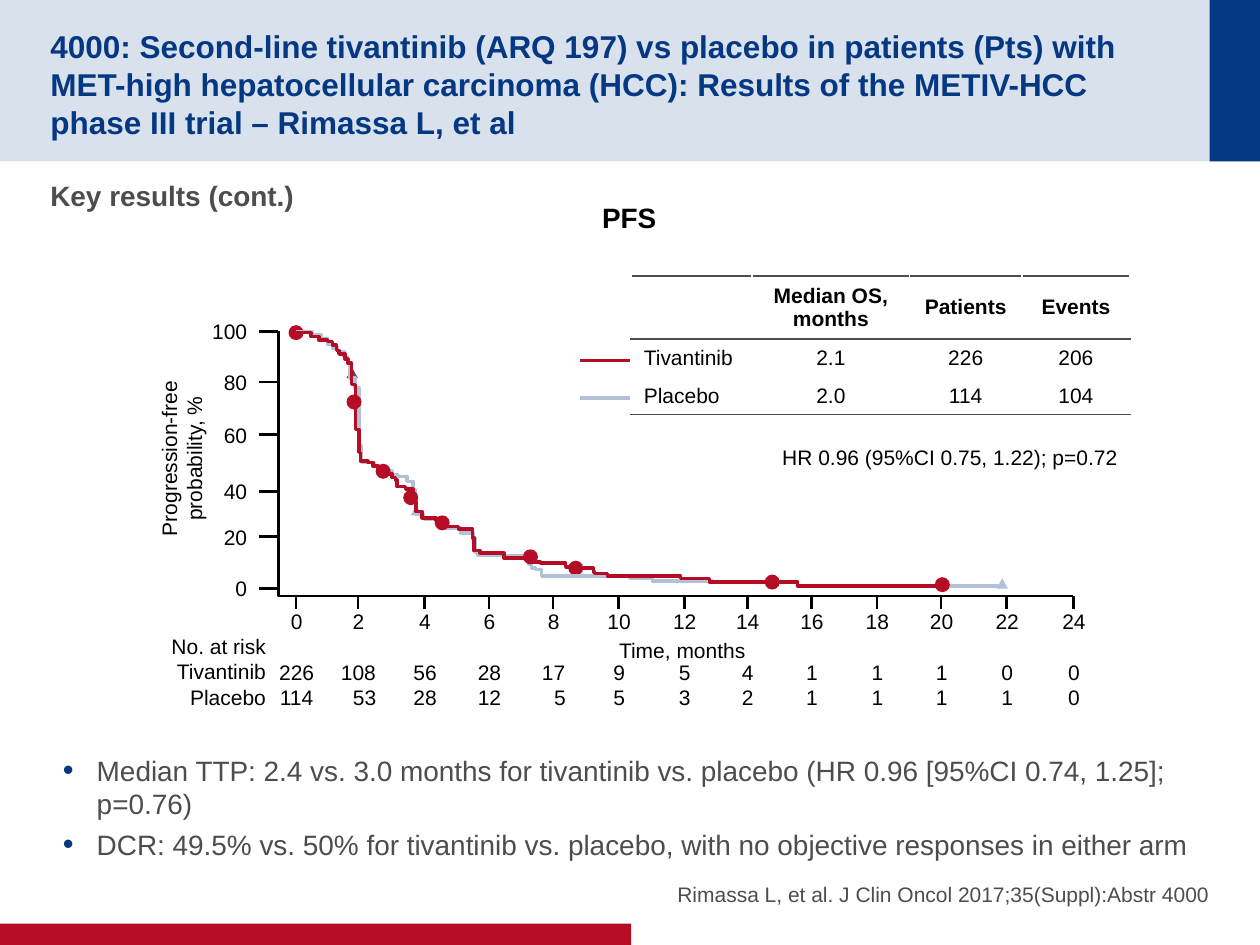
from lxml import etree
from pptx import Presentation
from pptx.dml.color import RGBColor
from pptx.enum import shapes, text
from pptx.oxml.ns import qn
from pptx.util import Pt

NAVY = RGBColor(0x04, 0x38, 0x82)
PALE_NAVY = RGBColor(0xD9, 0xE1, 0xEC)
RED = RGBColor(0xB6, 0x0D, 0x27)
LIGHT_BLUE = RGBColor(0xB2, 0xC0, 0xD8)
GREY = RGBColor(0x4D, 0x4D, 0x4D)
BLACK = RGBColor(0, 0, 0)

LEFT, CENTER, RIGHT = text.PP_ALIGN.LEFT, text.PP_ALIGN.CENTER, text.PP_ALIGN.RIGHT
TOP, MIDDLE, BOTTOM = (text.MSO_ANCHOR.TOP, text.MSO_ANCHOR.MIDDLE,
                       text.MSO_ANCHOR.BOTTOM)
RECT, OVAL, TRIANGLE = (shapes.MSO_SHAPE.RECTANGLE, shapes.MSO_SHAPE.OVAL,
                        shapes.MSO_SHAPE.ISOSCELES_TRIANGLE)

prs = Presentation()
prs.slide_width, prs.slide_height = Pt(720), Pt(540)
s = prs.slides.add_slide(prs.slide_layouts[5])


def add_filled(kind, x, y, w, h, color):
    sp = s.shapes.add_shape(kind, Pt(x), Pt(y), Pt(w), Pt(h))
    sp.shadow.inherit = False
    sp.fill.solid()
    sp.fill.fore_color.rgb = color
    sp.line.fill.background()
    return sp


def write(tf, lines, size=12, color=BLACK, bold=False, align=CENTER, **frame):
    """Fill a text frame with one paragraph per line; frame sets its attributes."""
    for name, value in frame.items():
        setattr(tf, name, value)
    for i, line in enumerate(lines):
        p = tf.paragraphs[0] if i == 0 else tf.add_paragraph()
        p.alignment = align
        r = p.add_run()
        r.text = line
        for name, value in {"name": "Arial", "size": Pt(size), "bold": bold}.items():
            setattr(r.font, name, value)
        r.font.color.rgb = color


# Bands and title
for x, y, w, h, color in [(0, 0, 720, 92.2, PALE_NAVY), (691.2, 0, 28.8, 92.2, NAVY),
                          (0, 527.8, 360.7, 12.2, RED)]:
    add_filled(RECT, x, y, w, h, color)

title = s.shapes.title
for name, value in {"left": 28.8, "top": 14.4, "width": 648.7, "height": 63.4}.items():
    setattr(title, name, Pt(value))
s.shapes._spTree.append(title._element)
write(title.text_frame,
      ["4000: Second-line tivantinib (ARQ 197) vs placebo in patients (Pts) with MET-high "
       "hepatocellular carcinoma (HCC): Results of the METIV-HCC phase III trial – "
       "Rimassa L, et al"],
      18, NAVY, True, LEFT, auto_size=text.MSO_AUTO_SIZE.NONE, word_wrap=True,
      vertical_anchor=MIDDLE, margin_left=0, margin_right=0, margin_top=Pt(3.6),
      margin_bottom=0)

# Text boxes: lines, box, format
FLUSH = {"margin_left": 0, "margin_right": 0, "word_wrap": True}
TIGHT = {"word_wrap": False}
labels = [
    (["Rimassa L, et al. J Clin Oncol 2017;35(Suppl):Abstr 4000"], (365.8, 480.2, 325.4, 38.2),
     {"color": GREY, "align": RIGHT, "vertical_anchor": BOTTOM, "margin_bottom": 0, **FLUSH}),
    (["Key results (cont.)"], (28.8, 98.6, 662.4, 39.6),
     {"size": 16, "color": GREY, "bold": True, "align": LEFT, **FLUSH}),
    (["PFS"], (98.6, 110.9, 522, 26.6), {"size": 16, "bold": True, "word_wrap": True}),
    (["Time, months"], (346.3, 360.7, 87.1, 21.6), TIGHT),
    (["No. at risk", "Tivantinib", "Placebo"], (90, 358.6, 69.1, 51.1),
     {"align": RIGHT, **TIGHT}),
    (["HR 0.96 (95%CI 0.75, 1.22); p=0.72"], (439.9, 250.6, 208.1, 21.6),
     {"align": LEFT, **TIGHT}),
    (["Progression-free", "probability, %"], (51.8, 244.1, 103.7, 36), TIGHT),
    (["Median TTP: 2.4 vs. 3.0 months for tivantinib vs. placebo (HR 0.96 [95%CI 0.74, 1.25]; "
      "p=0.76)",
      "DCR: 49.5% vs. 50% for tivantinib vs. placebo, with no objective responses in either arm"],
     (28.8, 427, 676.1, 69.1), {"size": 16, "color": GREY, "align": LEFT, "word_wrap": True}),
]

# Axis ticks with their labels and the numbers at risk
AXIS_X, AXIS_Y = 159.1, 340.6
segments = [(331.2, 205.9, 360, 205.9, RED, 2), (331.2, 227.5, 360, 227.5, LIGHT_BLUE, 2)]
for value, y in zip(range(100, -1, -20), [189.4, 218.2, 248.4, 280.8, 306.7, 336.2]):
    segments.append((AXIS_X - 10.8, y, AXIS_X, y, BLACK, 1.5))
    labels.append(([str(value)], (113.8, y - 10.8, 34.5, 21.6),
                   {"align": RIGHT, "vertical_anchor": MIDDLE, **TIGHT}))

tick_x = [169.2, 204.5, 242.6, 279.4, 316.1, 353.5, 391, 427, 463.7, 501.1, 537.8, 575.3, 613.4]
at_risk = [(226, 114), (108, 53), (56, 28), (28, 12), (17, 5), (9, 5), (5, 3), (4, 2),
           (1, 1), (1, 1), (1, 1), (0, 1), (0, 0)]
for i, (x, (tivantinib, placebo)) in enumerate(zip(tick_x, at_risk)):
    segments.append((x, AXIS_Y, x, AXIS_Y + 7.2, BLACK, 1.5))
    w = 34.6 if tivantinib > 99 else 28
    labels.append(([str(2 * i), str(tivantinib), str(placebo)],
                   (x + 0.3 - w / 2, 344.2, w, 65.5), TIGHT))

for lines, box, fmt in labels:
    tb = s.shapes.add_textbox(*map(Pt, box))
    tf = tb.text_frame
    write(tf, lines, **fmt)
    if lines[0] == "Progression-free":
        tb.rotation = 270
    elif lines[0].isdigit() and len(lines) == 3:
        tf.paragraphs[1].space_before = Pt(14.5)
        if lines[2] in ("53", "5") and lines[1] in ("108", "17"):
            tf.paragraphs[2].alignment = RIGHT
    elif lines[0].startswith("Median TTP"):
        for p in tf.paragraphs:
            p.space_after = Pt(4)
            pPr = p._p.get_or_add_pPr()
            pPr.set("marL", str(Pt(19.4)))
            pPr.set("indent", str(-Pt(19.4)))
            clr = etree.SubElement(pPr, qn("a:buClr"))
            etree.SubElement(clr, qn("a:srgbClr"), val=str(NAVY))
            etree.SubElement(pPr, qn("a:buSzPct"), val="110000")
            etree.SubElement(pPr, qn("a:buFont"), typeface="Arial")
            etree.SubElement(pPr, qn("a:buChar"), char="•")

for x1, y1, x2, y2, color, width in segments:
    c = s.shapes.add_connector(shapes.MSO_CONNECTOR.STRAIGHT, Pt(x1), Pt(y1), Pt(x2), Pt(y2))
    c.line.color.rgb = color
    c.line.width = Pt(width)
    etree.SubElement(c._element.spPr, qn("a:effectLst"))

# Summary table
rows = [("", "Median OS, months", "Patients", "Events"),
        ("Tivantinib", "2.1", "226", "206"),
        ("Placebo", "2.0", "114", "104")]
borders = [("a:lnT", "a:lnB"), ("a:lnT",), ("a:lnB",)]
table = s.shapes.add_table(3, 4, Pt(360.7), Pt(157.7), Pt(285.1), Pt(75.5)).table
table.first_row = table.horz_banding = False
for column, width in zip(table.columns, [69.1, 90, 64.1, 61.9]):
    column.width = Pt(width)
for i, (row, height) in enumerate(zip(rows, [34.3, 20.6, 20.6])):
    table.rows[i].height = Pt(height)
    for j, value in enumerate(row):
        cell = table.cell(i, j)
        cell.vertical_anchor = MIDDLE
        write(cell.text_frame, [value], bold=i == 0, align=CENTER if j else LEFT)
        tcPr = cell._tc.get_or_add_tcPr()
        for tag in borders[i]:
            ln = etree.SubElement(tcPr, qn(tag), w=str(Pt(1)))
            fill = etree.SubElement(ln, qn("a:solidFill"))
            etree.SubElement(fill, qn("a:srgbClr"), val=str(GREY))
        cell.fill.background()

# Survival curves: start, then (x, level after the drop), in hundredths of an inch
placebo_steps = [
    (235, 263), (248, 266), (255, 269), (260, 273), (264, 276), (268, 279), (273, 283),
    (276, 288), (278, 300), (282, 308), (285, 354), (287, 367), (297, 370), (300, 371),
    (304, 374), (311, 377), (316, 378), (323, 382), (328, 389), (330, 408), (336, 410),
    (337, 412), (350, 419), (366, 423), (376, 427), (377, 438), (379, 441), (418, 444),
    (420, 448), (422, 451), (425, 452), (430, 457), (500, 459), (518, 461), (565, 462),
    (633, 465), (798, 465)]
tivantinib_steps = [
    (235, 264), (247, 267), (253, 270), (260, 271), (264, 274), (267, 278), (269, 281),
    (274, 285), (276, 288), (279, 305), (282, 341), (285, 359), (286, 366), (292, 367),
    (296, 370), (300, 374), (305, 376), (311, 379), (314, 381), (315, 386), (322, 388),
    (328, 398), (330, 406), (335, 411), (346, 413), (351, 415), (355, 418), (364, 420),
    (375, 427), (376, 437), (381, 439), (400, 443), (422, 446), (429, 447), (449, 450),
    (454, 451), (471, 454), (472, 455), (482, 457), (540, 459), (563, 462), (633, 465),
    (747, 465)]
axis_steps = [(221, 263), (221, 473), (852, 473)]

# Each layer: steps, line colour and width, markers drawn over it (kind, left, top, colour)
layers = [
    (axis_steps, BLACK, 1.5,
     [(TRIANGLE, 234.7, 288.7, LIGHT_BLUE), (TRIANGLE, 198, 210.2, GREY),
      (OVAL, 324.7, 320.4, RED), (OVAL, 164.9, 185.8, RED), (OVAL, 437, 328.3, RED)]),
    (placebo_steps, LIGHT_BLUE, 2, [(TRIANGLE, 569.5, 330.5, LIGHT_BLUE)]),
    (tivantinib_steps, RED, 2,
     [(OVAL, x, y, RED) for x, y in [(534.2, 329.8), (198, 225.4), (248.4, 294.5),
                                     (230.4, 280.1), (214.6, 265), (298.8, 313.9)]]),
]
for steps, color, width, markers in layers:
    corners = []
    for (_, level), (x, y) in zip(steps, steps[1:]):
        corners += [(x, level), (x, y)]
    fb = s.shapes.build_freeform(*steps[0], scale=Pt(0.72))
    fb.add_line_segments(corners, close=False)
    sp = fb.convert_to_shape()
    sp.shadow.inherit = False
    sp.fill.background()
    sp.line.color.rgb = color
    sp.line.width = Pt(width)
    for kind, x, y, fill in markers:
        w, h = (8.6, 8.6) if kind == OVAL else (6.5, 5.8)
        add_filled(kind, x, y, w, h, fill)

prs.save("out.pptx")
